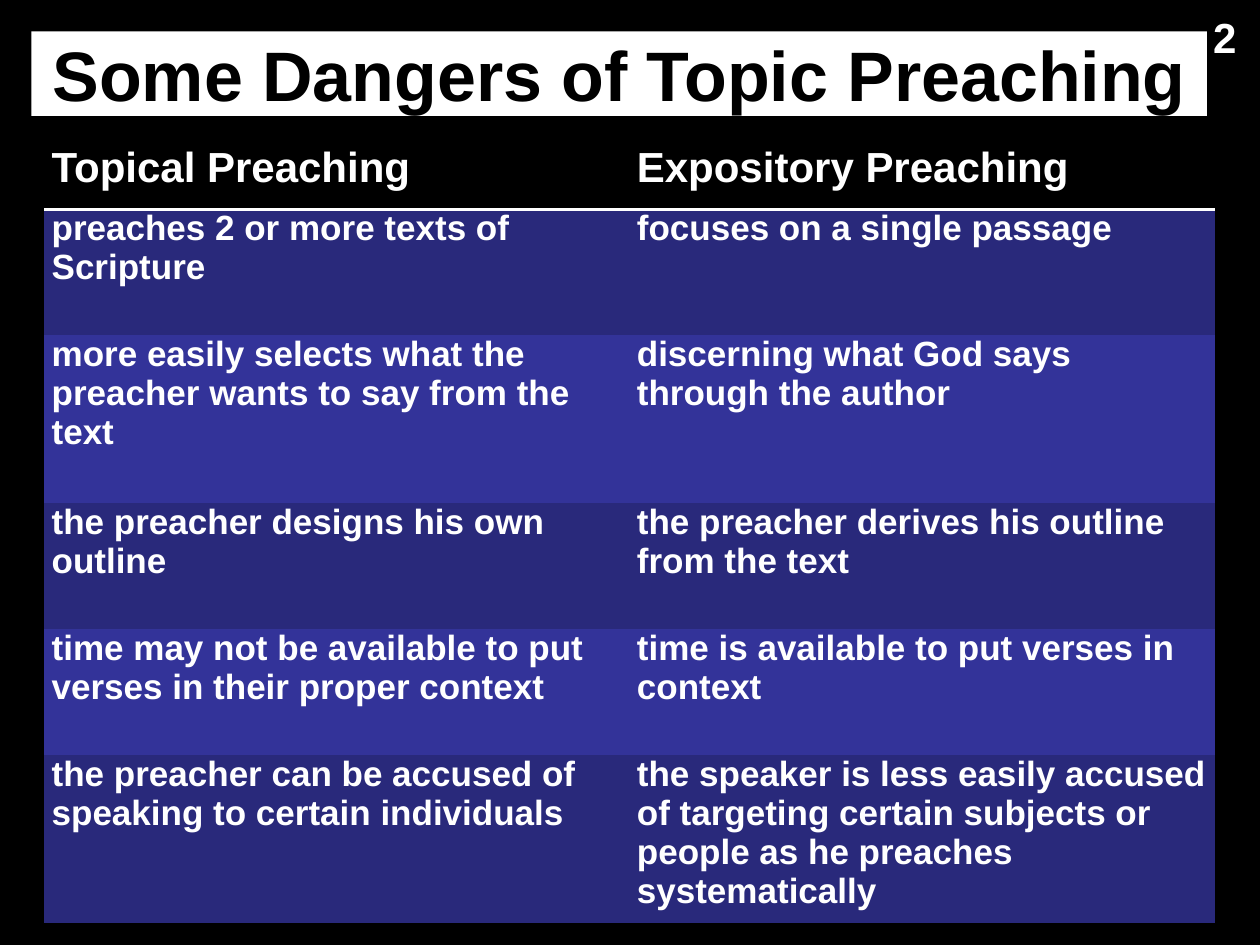
"""Build a slide that contrasts topical and expository preaching in a table."""
import dataclasses
import typing

import lxml.etree
import pptx
import pptx.dml.color
import pptx.enum.shapes
import pptx.enum.text
import pptx.oxml.ns
import pptx.util

Inches = pptx.util.Inches
Color = pptx.dml.color.RGBColor
Anchor = pptx.enum.text.MSO_ANCHOR
Align = pptx.enum.text.PP_ALIGN
qn = pptx.oxml.ns.qn


@dataclasses.dataclass(frozen=True)
class Theme:
    font: str = "Arial"
    black: Color = Color(0x00, 0x00, 0x00)
    white: Color = Color(0xFF, 0xFF, 0xFF)
    bands: tuple[Color, Color] = (Color(0x29, 0x29, 0x7B), Color(0x33, 0x33, 0x99))
    title: int = 40
    head: int = 24
    body: int = 20
    rule: int = 2
    plain: str = "{2D5ABB26-0587-4C30-8999-92F81FD0307C}"


class Row(typing.NamedTuple):
    left: str
    right: str
    height: float


THEME = Theme()
ROWS = [
    Row("Topical Preaching", "Expository Preaching", 0.51),
    Row("preaches 2 or more texts of Scripture",
        "focuses on a single passage", 1),
    Row("more easily selects what the preacher wants to say from the text",
        "discerning what God says through the author", 1.33),
    Row("the preacher designs his own outline",
        "the preacher derives his outline from the text", 1),
    Row("time may not be available to put verses in their proper context",
        "time is available to put verses in context", 1),
    Row("the preacher can be accused of speaking to certain individuals",
        "the speaker is less easily accused of targeting certain subjects "
        "or people as he preaches systematically", 1.33),
]


def write(frame, text: str, size: int, color: Color, align=Align.LEFT) -> None:
    """Write one bold run into the first paragraph of a frame."""
    para = frame.paragraphs[0]
    para.alignment = align
    run = para.add_run()
    run.text = text
    run.font.name = THEME.font
    run.font.size = pptx.util.Pt(size)
    run.font.bold = True
    run.font.color.rgb = color


def add_title(slide) -> None:
    """Add the white title bar."""
    bar = slide.shapes.add_shape(
        pptx.enum.shapes.MSO_SHAPE.RECTANGLE,
        Inches(0.25), Inches(0.25), Inches(9.33), Inches(0.67))
    bar.shadow.inherit = False
    bar.fill.solid()
    bar.fill.fore_color.rgb = THEME.white
    bar.line.fill.background()
    bar.text_frame.word_wrap = True
    bar.text_frame.vertical_anchor = Anchor.MIDDLE
    write(bar.text_frame, "Some Dangers of Topic Preaching",
          THEME.title, THEME.black, Align.CENTER)


def add_number(slide) -> None:
    """Add the number in the top right corner."""
    box = slide.shapes.add_textbox(
        Inches(9.53), Inches(0.04), Inches(0.39), Inches(0.5))
    box.text_frame.word_wrap = False
    box.text_frame.auto_size = pptx.enum.text.MSO_AUTO_SIZE.SHAPE_TO_FIT_TEXT
    write(box.text_frame, "2", THEME.head, THEME.white)


def underline(cell) -> None:
    """Draw a rule along the bottom of a cell."""
    line = lxml.etree.Element(qn("a:lnB"), w=str(pptx.util.Pt(THEME.rule)))
    fill = lxml.etree.SubElement(line, qn("a:solidFill"))
    lxml.etree.SubElement(fill, qn("a:srgbClr"), val=str(THEME.white))
    cell._tc.get_or_add_tcPr().insert(0, line)


def fill_cell(cell, text: str, size: int, color: Color) -> None:
    """Set the margins, fill and text of a cell."""
    cell.margin_left = cell.margin_right = Inches(0.06)
    cell.margin_top = cell.margin_bottom = 0
    cell.vertical_anchor = Anchor.TOP
    cell.fill.solid()
    cell.fill.fore_color.rgb = color
    write(cell.text_frame, text, size, THEME.white)


def add_grid(slide, rows: list[Row]) -> None:
    """Add the table with a ruled head and banded rows."""
    frame = slide.shapes.add_table(
        len(rows), 2, Inches(0.35), Inches(1.15), Inches(9.29),
        Inches(sum(row.height for row in rows)))
    grid = frame.table
    next(grid._tbl.iter(qn("a:tableStyleId"))).text = THEME.plain
    for i, row in enumerate(rows):
        grid.rows[i].height = Inches(row.height)
        size = THEME.body if i else THEME.head
        color = THEME.bands[(i - 1) % 2] if i else THEME.black
        for j, text in enumerate((row.left, row.right)):
            cell = grid.cell(i, j)
            fill_cell(cell, text, size, color)
            if i == 0:
                underline(cell)


def main() -> None:
    """Build and save the slide."""
    deck = pptx.Presentation()
    deck.slide_width, deck.slide_height = Inches(10), Inches(7.5)
    slide = deck.slides.add_slide(deck.slide_layouts[6])
    slide.background.fill.solid()
    slide.background.fill.fore_color.rgb = THEME.black
    add_title(slide)
    add_number(slide)
    add_grid(slide, ROWS)
    deck.save("out.pptx")


if __name__ == "__main__":
    main()
